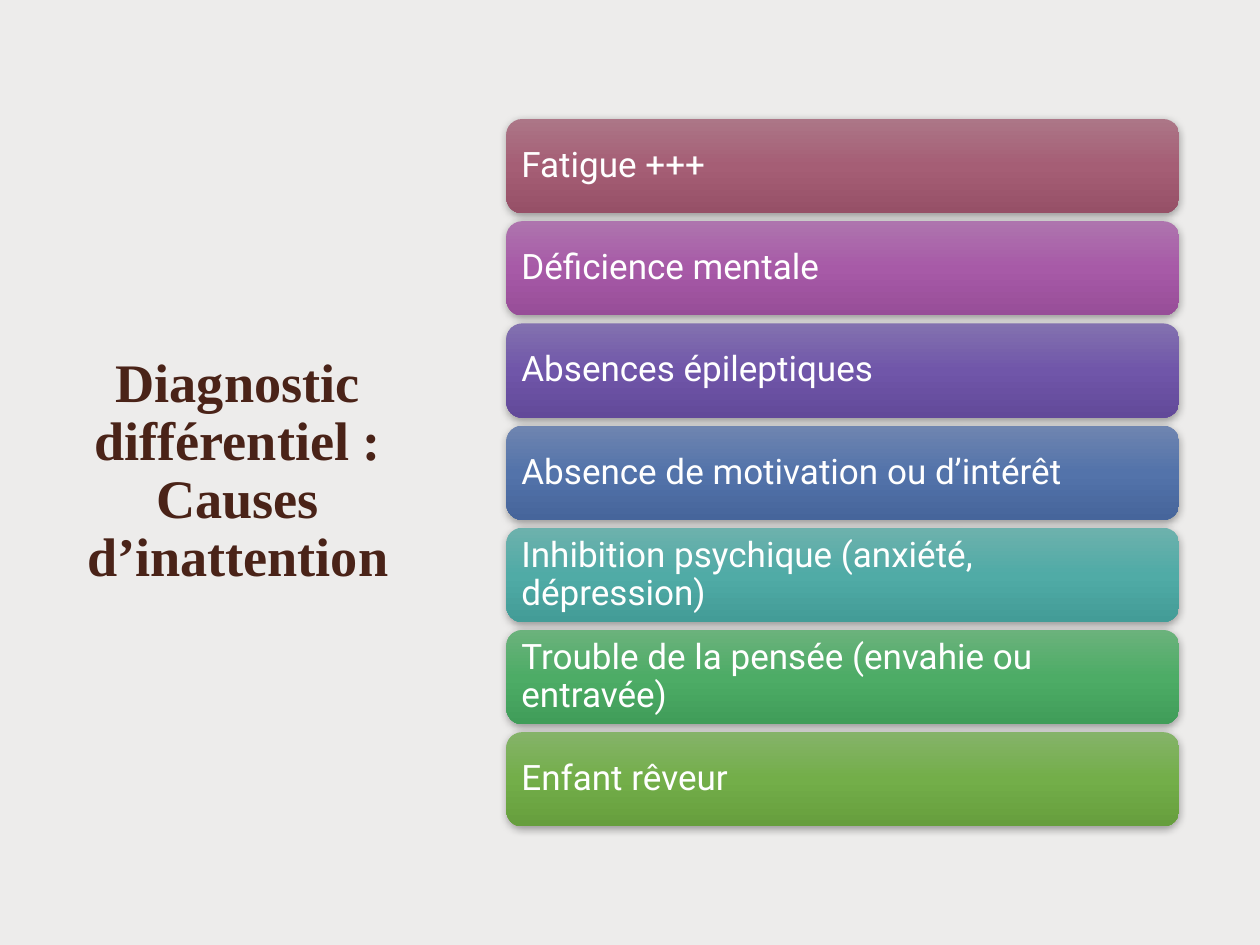
from dataclasses import dataclass

from lxml import etree
from pptx import Presentation
from pptx import util as u
from pptx.dml.color import RGBColor
from pptx.enum import shapes, text
from pptx.oxml.ns import qn


@dataclass(frozen=True)
class Theme:
    background: str = "EDECEB"
    heading: str = "4A2318"
    label: str = "FFFFFF"
    shadow: str = "000000"
    heading_font: str = "Times New Roman"
    label_font: str = "Roboto"
    heading_size: int = 31
    label_size: int = 20


@dataclass(frozen=True)
class Cause:
    label: str
    gradient: tuple[str, str, str]


THEME = Theme()
CAUSES = [
    Cause("Fatigue +++", ("AC7687", "A55E75", "965067")),
    Cause("Déficience mentale", ("AE74AE", "A75AA7", "974D98")),
    Cause("Absences épileptiques", ("8371AF", "7056A9", "624999")),
    Cause("Absence de motivation ou d’intérêt", ("6F85B0", "5373AA", "46659B")),
    Cause("Inhibition psychique (anxiété, dépression)", ("6DB1AD", "50ABA6", "439C97")),
    Cause("Trouble de la pensée (envahie ou entravée)", ("6BB27C", "4DAC66", "409D59")),
    Cause("Enfant rêveur", ("85B369", "73AE49", "669E3D")),
]
BAR_LEFT, BAR_TOP, BAR_WIDTH, BAR_HEIGHT = u.Cm(10.21), u.Cm(2.4), u.Cm(13.56), u.Cm(1.9)
BAR_PITCH = u.Cm(2.06)


def set_attributes(target, values: dict) -> None:
    for name, value in values.items():
        setattr(target, name, value)


def write(frame, wording: str, frame_format: dict, paragraph_format: dict,
          font_format: dict, color: str) -> None:
    frame.text = wording
    set_attributes(frame, frame_format)
    paragraph = frame.paragraphs[0]
    set_attributes(paragraph, paragraph_format)
    font = paragraph.runs[0].font
    set_attributes(font, font_format)
    font.color.rgb = RGBColor.from_string(color)


def apply_gradient(bar, colors: tuple[str, ...]) -> None:
    """Spread the colours evenly from the top edge to the bottom edge."""
    bar.fill.gradient()
    bar.fill.gradient_angle = 270
    stops = bar._element.spPr.find(f".//{qn('a:gsLst')}")
    for stop in list(stops):
        stops.remove(stop)
    for index, color in enumerate(colors):
        position = 100000 * index // (len(colors) - 1)
        stop = etree.SubElement(stops, qn("a:gs"), pos=str(position))
        etree.SubElement(stop, qn("a:srgbClr"), val=color)


def apply_shadow(bar) -> None:
    bar.shadow.inherit = False
    effects = bar._element.spPr.find(qn("a:effectLst"))
    shadow = etree.SubElement(effects, qn("a:outerShdw"), blurRad=str(u.Pt(4.5)),
                              dist=str(u.Pt(1.5)), dir="5400000", rotWithShape="0")
    color = etree.SubElement(shadow, qn("a:srgbClr"), val=THEME.shadow)
    etree.SubElement(color, qn("a:alpha"), val="35000")


def add_heading(slide, wording: str) -> None:
    heading = slide.shapes.title
    set_attributes(heading, {"left": u.Cm(1.35), "top": u.Cm(1.78),
                             "width": u.Cm(6.88), "height": u.Cm(15.49)})
    write(heading.text_frame, wording,
          {"vertical_anchor": text.MSO_ANCHOR.MIDDLE, "word_wrap": True,
           "auto_size": text.MSO_AUTO_SIZE.NONE},
          {"alignment": text.PP_ALIGN.CENTER, "line_spacing": 0.89},
          {"name": THEME.heading_font, "size": u.Pt(THEME.heading_size), "bold": True},
          THEME.heading)


def add_cause(slide, cause: Cause, row: int) -> None:
    bar = slide.shapes.add_shape(shapes.MSO_SHAPE.ROUNDED_RECTANGLE, BAR_LEFT,
                                 BAR_TOP + row * BAR_PITCH, BAR_WIDTH, BAR_HEIGHT)
    apply_gradient(bar, cause.gradient)
    bar.line.fill.background()
    apply_shadow(bar)
    # The rounded corners add their own inset to these margins.
    write(bar.text_frame, cause.label,
          {"vertical_anchor": text.MSO_ANCHOR.MIDDLE, "word_wrap": True,
           "margin_left": u.Cm(0.21), "margin_right": u.Cm(0.21),
           "margin_top": u.Cm(0.1), "margin_bottom": u.Cm(0.1)},
          {"alignment": text.PP_ALIGN.LEFT, "line_spacing": 0.9},
          {"name": THEME.label_font, "size": u.Pt(THEME.label_size)},
          THEME.label)


def main() -> None:
    deck = Presentation()
    deck.slide_width, deck.slide_height = u.Cm(25.4), u.Cm(19.05)
    title_only = deck.slide_layouts[5]
    slide = deck.slides.add_slide(title_only)
    backdrop = slide.background.fill
    backdrop.solid()
    backdrop.fore_color.rgb = RGBColor.from_string(THEME.background)
    add_heading(slide, "Diagnostic différentiel : Causes d’inattention")
    for row, cause in enumerate(CAUSES):
        add_cause(slide, cause, row)
    deck.save("out.pptx")


if __name__ == "__main__":
    main()
